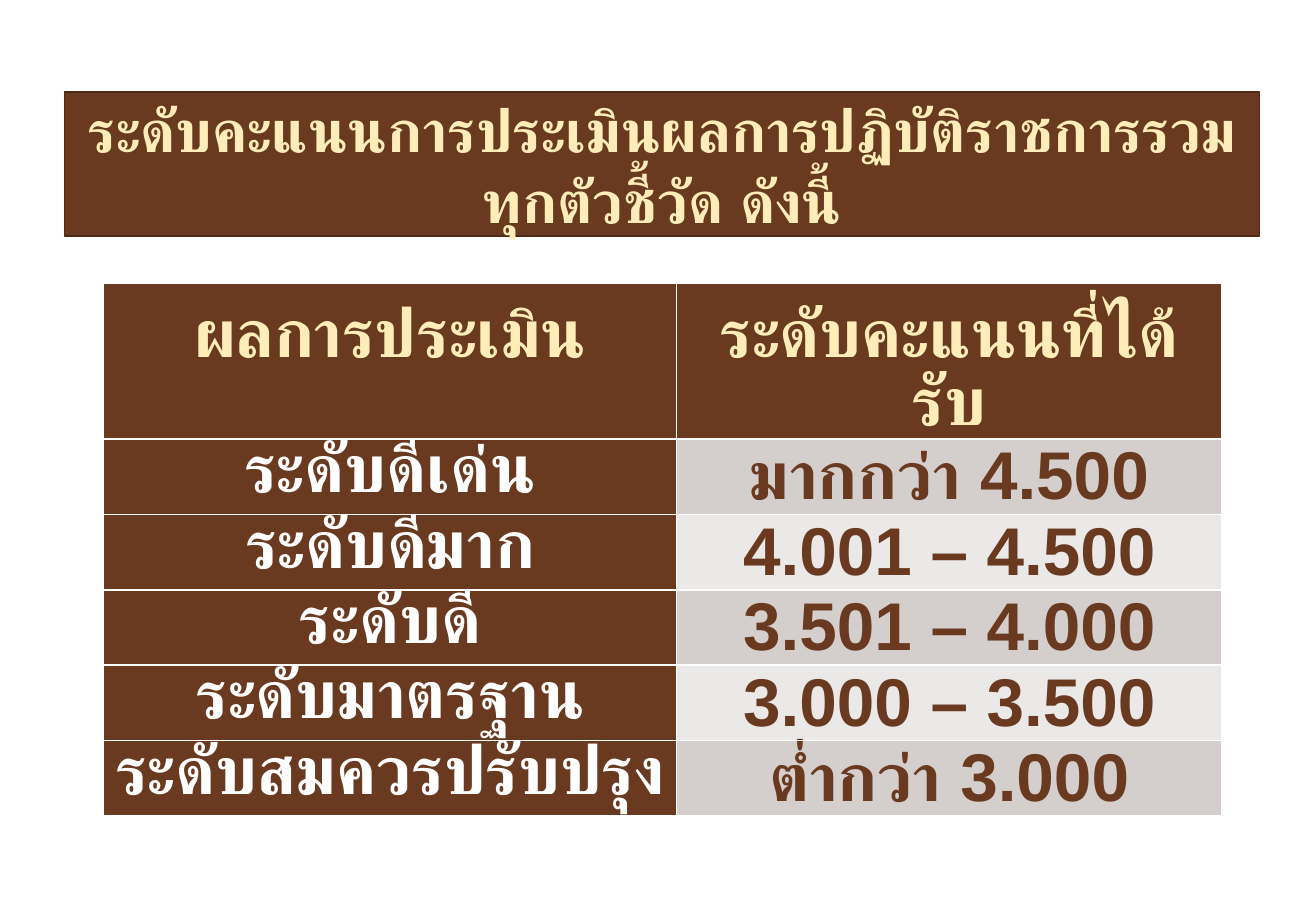
from typing import NamedTuple

import pptx
import pptx.dml.color
import pptx.enum.lang
import pptx.enum.shapes
import pptx.enum.text
import pptx.slide
import pptx.table
import pptx.text.text
import pptx.util
from pptx.dml.color import RGBColor
from pptx.util import Cm

BROWN = RGBColor(0x6A, 0x3A, 0x20)
DARK_BROWN = RGBColor(0x4E, 0x2B, 0x18)
CREAM = RGBColor(0xFF, 0xED, 0xB9)
WHITE = RGBColor(0xFF, 0xFF, 0xFF)
BAND_COLOURS = (RGBColor(0xD4, 0xCE, 0xCD), RGBColor(0xEB, 0xE8, 0xE8))

FONT = "Arial"
TITLE = "ระดับคะแนนการประเมินผลการปฏิบัติราชการรวมทุกตัวชี้วัด ดังนี้"
COLUMN_WIDTHS = (Cm(11.99), Cm(11.4))
HEADER_HEIGHT = Cm(3.24)
LEVEL_HEIGHT = Cm(1.57)


class Level(NamedTuple):
    name: str
    score: str


HEADER = Level("ผลการประเมิน", "ระดับคะแนนที่ได้รับ")
LEVELS = (
    Level("ระดับดีเด่น", "มากกว่า 4.500"),
    Level("ระดับดีมาก", "4.001 – 4.500"),
    Level("ระดับดี", "3.501 – 4.000"),
    Level("ระดับมาตรฐาน", "3.000 – 3.500"),
    Level("ระดับสมควรปรับปรุง", "ต่ำกว่า 3.000"),
)


def write_text(frame: pptx.text.text.TextFrame, text: str, *,
               size: float, colour: RGBColor) -> None:
    """Fill the frame with one bold, centred Thai paragraph."""
    frame.word_wrap = True
    paragraph = frame.paragraphs[0]
    paragraph.alignment = pptx.enum.text.PP_ALIGN.CENTER
    run = paragraph.add_run()
    run.text = text
    run.font.name = FONT
    run.font.size = pptx.util.Pt(size)
    run.font.bold = True
    run.font.color.rgb = colour
    run.font.language_id = pptx.enum.lang.MSO_LANGUAGE_ID.THAI


def add_title(slide: pptx.slide.Slide) -> None:
    banner = slide.shapes.add_shape(
        pptx.enum.shapes.MSO_SHAPE.RECTANGLE, Cm(1.35), Cm(1.93), Cm(24.99), Cm(3))
    banner.shadow.inherit = False
    banner.fill.solid()
    banner.fill.fore_color.rgb = BROWN
    banner.line.color.rgb = DARK_BROWN
    banner.line.width = pptx.util.Pt(1)
    banner.text_frame.vertical_anchor = pptx.enum.text.MSO_ANCHOR.MIDDLE
    write_text(banner.text_frame, TITLE, size=35, colour=CREAM)


def fill_cell(cell: pptx.table._Cell, text: str, *, fill: RGBColor,
              colour: RGBColor, top: int = 0) -> None:
    cell.margin_left = cell.margin_right = Cm(0.18)
    cell.margin_top, cell.margin_bottom = top, 0
    cell.fill.solid()
    cell.fill.fore_color.rgb = fill
    write_text(cell.text_frame, text, size=40, colour=colour)


def add_score_table(slide: pptx.slide.Slide) -> None:
    table = slide.shapes.add_table(
        len(LEVELS) + 1, len(COLUMN_WIDTHS), Cm(2.16), Cm(5.93),
        sum(COLUMN_WIDTHS), HEADER_HEIGHT + len(LEVELS) * LEVEL_HEIGHT).table
    for column, width in zip(table.columns, COLUMN_WIDTHS):
        column.width = width

    table.rows[0].height = HEADER_HEIGHT
    for index, heading in enumerate(HEADER):
        fill_cell(table.cell(0, index), heading, fill=BROWN, colour=CREAM, top=Cm(0.43))

    for row, level in enumerate(LEVELS, start=1):
        table.rows[row].height = LEVEL_HEIGHT
        band = BAND_COLOURS[(row - 1) % len(BAND_COLOURS)]
        fill_cell(table.cell(row, 0), level.name, fill=BROWN, colour=WHITE)
        fill_cell(table.cell(row, 1), level.score, fill=band, colour=BROWN)


def main() -> None:
    presentation = pptx.Presentation()
    presentation.slide_width = Cm(27.52)
    presentation.slide_height = Cm(19.05)
    slide = presentation.slides.add_slide(presentation.slide_layouts[6])
    add_title(slide)
    add_score_table(slide)
    presentation.save("out.pptx")


if __name__ == "__main__":
    main()
